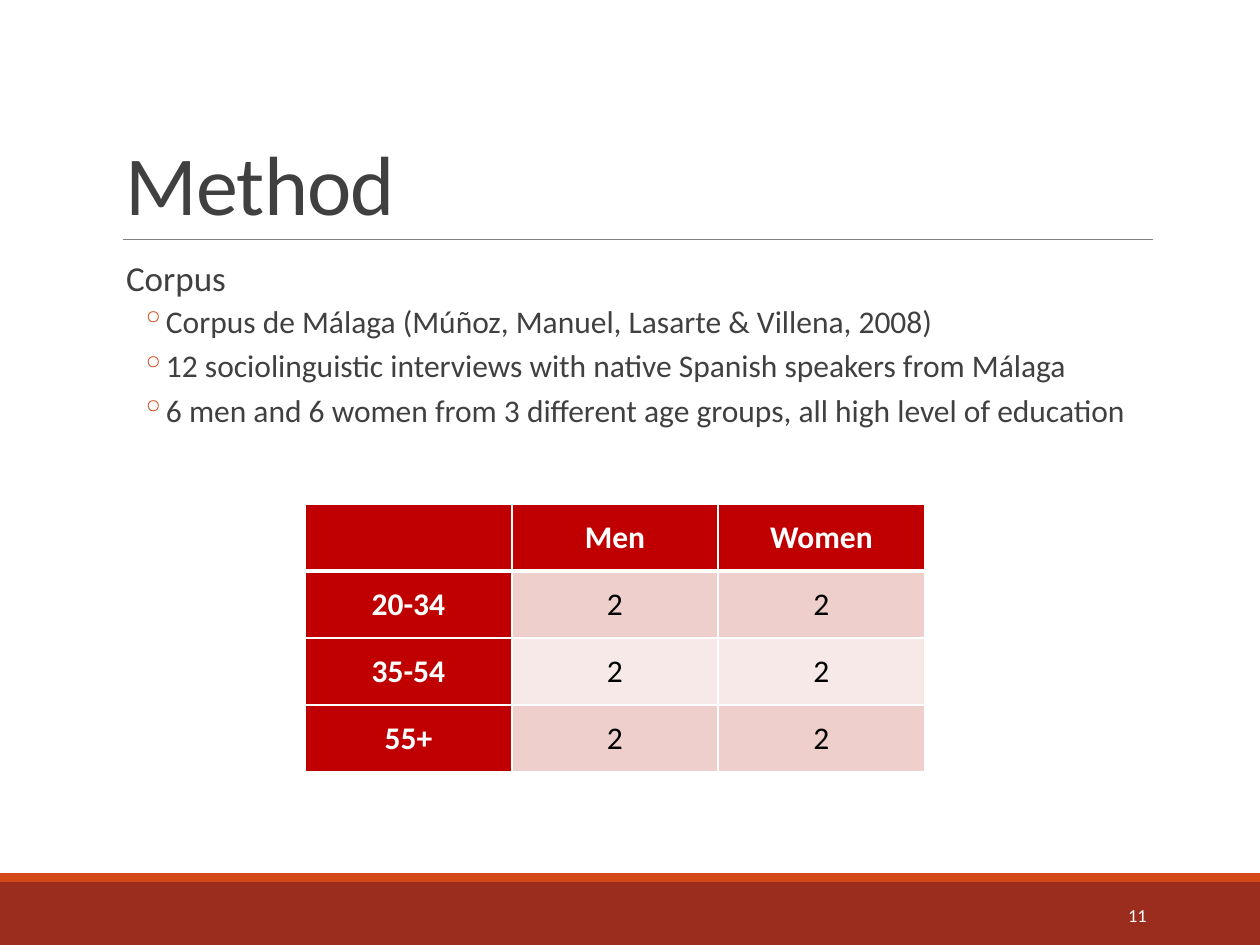
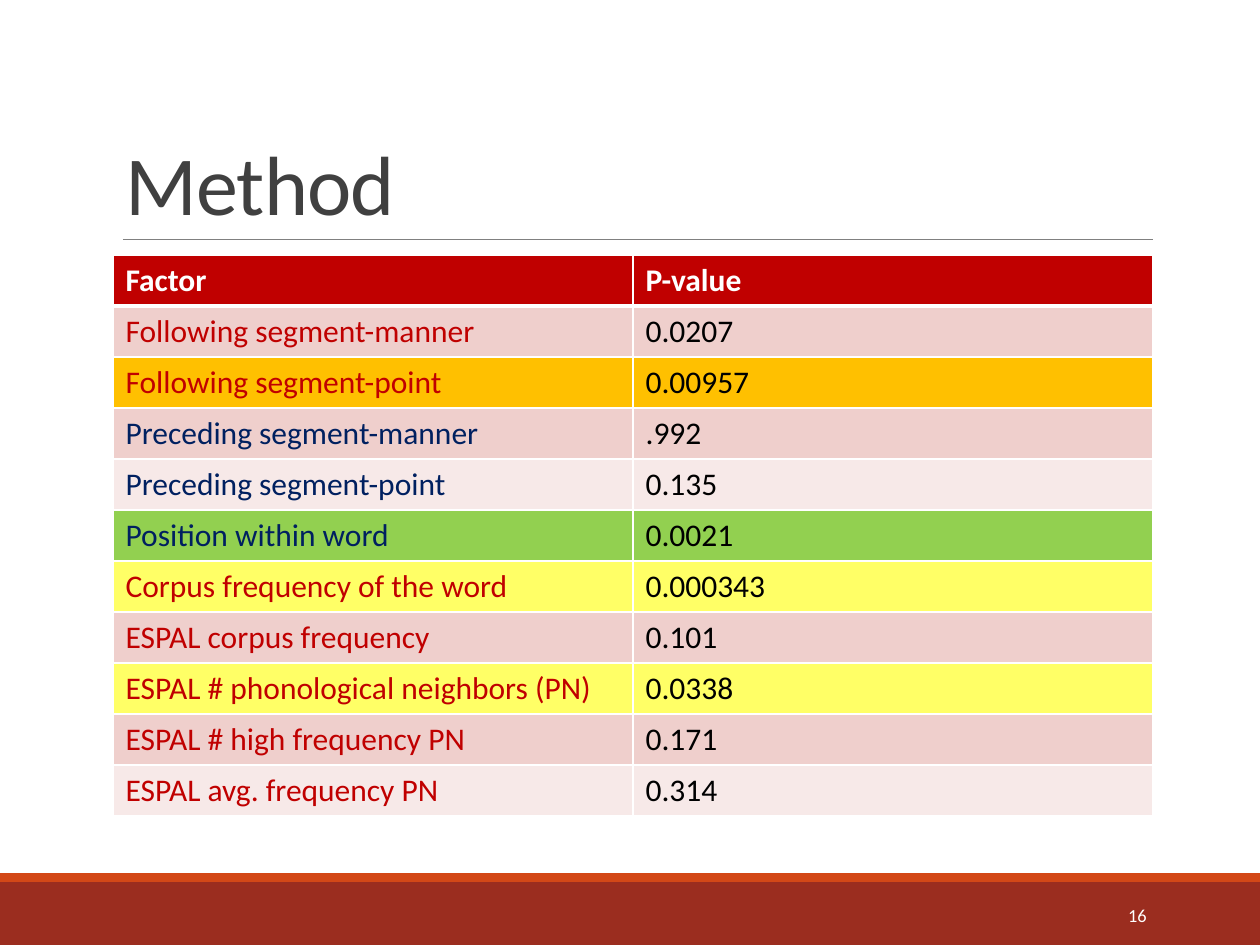
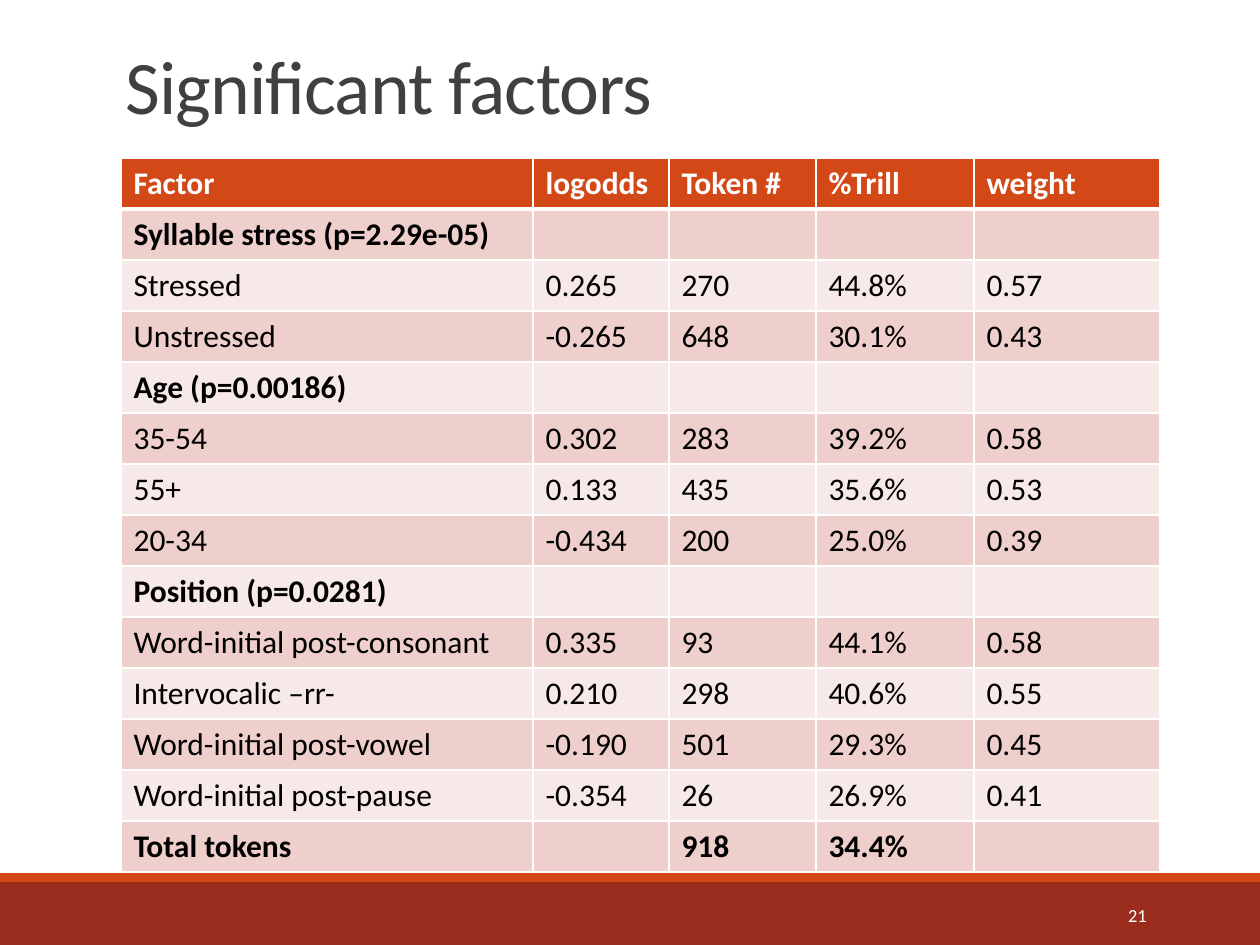
"""Build three slides on the method and the significant factors of a speech study."""
from lxml import etree
from pptx import Presentation
from pptx.dml.color import RGBColor
from pptx.enum.shapes import MSO_CONNECTOR, MSO_SHAPE
from pptx.enum.text import MSO_ANCHOR, MSO_AUTO_SIZE, PP_ALIGN
from pptx.oxml.ns import qn
from pptx.util import Pt

LEFT, CENTER, RIGHT = PP_ALIGN.LEFT, PP_ALIGN.CENTER, PP_ALIGN.RIGHT
MIDDLE, BOTTOM = MSO_ANCHOR.MIDDLE, MSO_ANCHOR.BOTTOM
FIXED = MSO_AUTO_SIZE.NONE
RECT, LINE = MSO_SHAPE.RECTANGLE, MSO_CONNECTOR.STRAIGHT

FONT = "Calibri"
WHITE, BLACK, GRAY, DARK = "FFFFFF", "000000", "808080", "404040"
BRICK, ORANGE, RED, NAVY = "9B2D1F", "D34817", "C00000", "002060"
BANDS = ["F7E9E8", "EFCFCC"]
AMBER, GREEN, YELLOW = "FFC000", "92D050", "FFFF66"

POINTS = [
    "Corpus de Málaga (Múñoz, Manuel, Lasarte & Villena, 2008)",
    "12 sociolinguistic interviews with native Spanish speakers from Málaga",
    "6 men and 6 women from 3 different age groups, all high level of education",
]
GROUPS = [
    ("", "Men", "Women"),
    ("20-34", "2", "2"),
    ("35-54", "2", "2"),
    ("55+", "2", "2"),
]
TESTS = [
    ("Factor", "P-value"),
    ("Following segment-manner", "0.0207"),
    ("Following segment-point", "0.00957"),
    ("Preceding segment-manner", ".992"),
    ("Preceding segment-point", "0.135"),
    ("Position within word", "0.0021"),
    ("Corpus frequency of the word", "0.000343"),
    ("ESPAL corpus frequency", "0.101"),
    ("ESPAL # phonological neighbors (PN)", "0.0338"),
    ("ESPAL # high frequency PN", "0.171"),
    ("ESPAL avg. frequency PN", "0.314"),
]
MARKS = {2: AMBER, 5: GREEN, 6: YELLOW, 8: YELLOW}
NAVY_ROWS = (3, 4, 5)
FACTORS = [
    ("Factor", "logodds", "Token #", "%Trill", "weight"),
    ("Syllable stress (p=2.29e-05)", "", "", "", ""),
    ("Stressed", "0.265", "270", "44.8%", "0.57"),
    ("Unstressed", "-0.265", "648", "30.1%", "0.43"),
    ("Age (p=0.00186)", "", "", "", ""),
    ("35-54", "0.302", "283", "39.2%", "0.58"),
    ("55+", "0.133", "435", "35.6%", "0.53"),
    ("20-34", "-0.434", "200", "25.0%", "0.39"),
    ("Position (p=0.0281)", "", "", "", ""),
    ("Word-initial post-consonant", "0.335", "93", "44.1%", "0.58"),
    ("Intervocalic –rr-", "0.210", "298", "40.6%", "0.55"),
    ("Word-initial post-vowel", "-0.190", "501", "29.3%", "0.45"),
    ("Word-initial post-pause", "-0.354", "26", "26.9%", "0.41"),
    ("Total tokens", "", "918", "34.4%", ""),
]


def px(n):
    return round(n * 914400 / 126)


def rgb(code):
    return RGBColor.from_string(code)


class Deck:
    def __init__(self):
        self.prs = Presentation()
        self.prs.slide_width, self.prs.slide_height = px(1260), px(945)
        self.slide = None

    def page(self, title, number, size=48, high=200):
        self.slide = self.prs.slides.add_slide(self.prs.slide_layouts[5])
        self.band(882, 63, BRICK)
        self.band(873, 9, ORANGE)
        self.title(title, size, high)
        frame = self.box(1023, 890, 136, 50, str(number))
        frame.vertical_anchor = MIDDLE
        self.style(frame.paragraphs[0], 10.5, WHITE, align=RIGHT)

    def style(self, para, size, ink, bold=False, align=LEFT):
        para.alignment = align
        for font in [para.font] + [run.font for run in para.runs]:
            font.name, font.size, font.bold = FONT, Pt(size), bold
            font.color.rgb = rgb(ink)

    def title(self, text, size, high):
        shape = self.slide.shapes.title
        shape.left, shape.top = px(113), px(39)
        shape.width, shape.height = px(1040), px(high)
        frame = shape.text_frame
        frame.text = text
        frame.auto_size, frame.vertical_anchor = FIXED, BOTTOM
        para = frame.paragraphs[0]
        para.line_spacing = 0.85
        self.style(para, size, DARK)
        para.runs[0].font._element.set("spc", "-50")

    def band(self, y, high, fill):
        shape = self.slide.shapes.add_shape(RECT, 0, px(y), px(1260), px(high))
        shape.shadow.inherit = False
        shape.fill.solid()
        shape.fill.fore_color.rgb = rgb(fill)
        shape.line.fill.background()

    def rule(self):
        line = self.slide.shapes.add_connector(LINE, px(123), px(239), px(1153), px(239))
        line.line.color.rgb = rgb(GRAY)
        line.line.width = Pt(0.5)
        etree.SubElement(line._element.spPr, qn("a:effectLst"))

    def box(self, x, y, wide, high, text):
        frame = self.slide.shapes.add_textbox(px(x), px(y), px(wide), px(high)).text_frame
        frame.word_wrap = True
        frame.text = text
        return frame

    def bullets(self, x, y, wide, high, head, points):
        frame = self.box(x, y, wide, high, "\n".join([head] + points))
        frame.margin_left = frame.margin_right = 0
        for i, para in enumerate(frame.paragraphs):
            self.style(para, 18 if i else 20, DARK)
            para.line_spacing = 0.9
            para.space_before, para.space_after = (Pt(2), Pt(4)) if i else (Pt(12), Pt(2))
            props = para._p.get_or_add_pPr()
            props.set("marL", str(px(53 if i else 13)))
            if i:
                props.set("indent", str(px(-25)))
                tint = etree.Element(qn("a:buClr"))
                etree.SubElement(tint, qn("a:srgbClr"), val=ORANGE)
                mark = etree.Element(qn("a:buChar"), char="◦")
                at = props.index(props.find(qn("a:defRPr")))
                props[at:at] = [tint, mark]

    def edges(self, cell, base):
        props = cell._tc.get_or_add_tcPr()
        for side in "LRTB":
            width = Pt(base if side == "B" else 1)
            line = etree.SubElement(props, qn("a:ln" + side), w=str(width))
            fill = etree.SubElement(line, qn("a:solidFill"))
            etree.SubElement(fill, qn("a:srgbClr"), val=WHITE)

    def paint(self, cell, fill, ink, bold=False, align=LEFT):
        cell.fill.solid()
        cell.fill.fore_color.rgb = rgb(fill)
        self.style(cell.text_frame.paragraphs[0], 18, ink, bold, align)

    def grid(self, x, y, wides, high, rows, head, align=LEFT):
        shape = self.slide.shapes.add_table(
            len(rows), len(wides), px(x), px(y), px(sum(wides)), px(high * len(rows)))
        table = shape.table
        for col, wide in zip(table.columns, wides):
            col.width = px(wide)
        for r, row in enumerate(rows):
            table.rows[r].height = px(high)
            for c, text in enumerate(row):
                cell = table.cell(r, c)
                cell.text = text
                self.edges(cell, 1 if r else 3)
                if r:
                    self.paint(cell, BANDS[r % 2], BLACK, align=align)
                else:
                    self.paint(cell, head, WHITE, True, align)
        return table


def corpus(deck):
    deck.page("Method", 11)
    deck.rule()
    deck.bullets(113, 255, 1040, 554, "Corpus", POINTS)
    table = deck.grid(305, 504, [207, 206, 207], 67, GROUPS, RED, CENTER)
    for cell in table.iter_cells():
        cell.vertical_anchor = MIDDLE
        cell.margin_left = cell.margin_right = px(9)
        cell.margin_top = cell.margin_bottom = 0
    for r in range(1, len(GROUPS)):
        deck.paint(table.cell(r, 0), RED, WHITE, True, CENTER)


def tests(deck):
    deck.page("Method", 16)
    deck.rule()
    table = deck.grid(113, 255, [520, 520], 51, TESTS, RED)
    for r in range(1, len(TESTS)):
        fill = MARKS.get(r, BANDS[r % 2])
        deck.paint(table.cell(r, 0), fill, NAVY if r in NAVY_ROWS else RED)
        deck.paint(table.cell(r, 1), fill, BLACK)


def factors(deck):
    deck.page("Significant factors", 21, 43.2, 97)
    table = deck.grid(121, 158, [412, 136, 147, 158, 186], 51, FACTORS, ORANGE)
    for r, row in enumerate(FACTORS):
        if not row[-1]:
            for c in range(len(row)):
                deck.paint(table.cell(r, c), BANDS[r % 2], BLACK, True)


def main():
    deck = Deck()
    corpus(deck)
    tests(deck)
    factors(deck)
    deck.prs.save("out.pptx")


if __name__ == "__main__":
    main()
